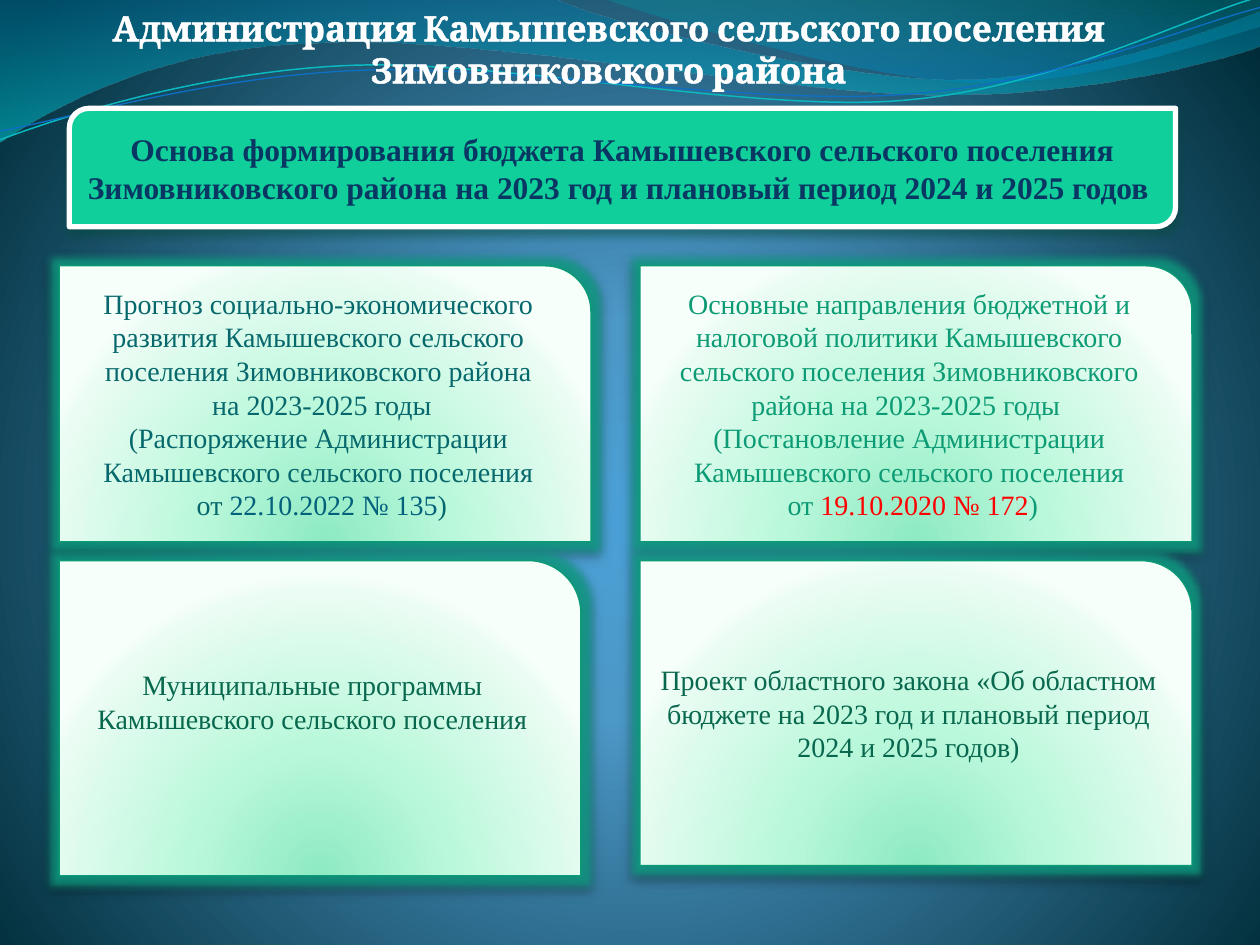
"""Build the slide on what the budget of a rural settlement is based on."""
from dataclasses import dataclass

from lxml import etree
from pptx import Presentation
from pptx import util as u
from pptx.dml.color import RGBColor
from pptx.enum import shapes, text
from pptx.oxml.ns import qn

COLORS = {
    "white": "FFFFFF", "banner": "10CF9B", "navy": "083763", "edge": "0A9B74",
    "teal": "06686C", "blue": "04617B", "green": "0C9B74", "red": "FF0000",
    "forest": "08684E", "glow": "0F9F84", "cyan": "0AB8BF", "azure": "0F6FC6",
}
SERIF = "Times New Roman"
CARD_STOPS = [(0, "8DEAC2"), (43, "BAF8DB"), (93, "EAFCF3"), (100, "F7FFFB")]
BACK_STOPS = [(0, "4AA0D6"), (25, "4C98C7"), (100, "002C38")]
UNITS_PER_INCH = 1000


@dataclass
class Card:
    left: float
    top: float
    width: float
    height: float
    color: str
    lines: list[str]
    accent: str = ""
    accent_color: str = ""
    bottom_inset: float = 0.05


@dataclass
class Wave:
    start: tuple[float, float]
    segments: list[tuple[float, ...]]
    stops: list[tuple] | None = None
    line: str = ""
    weight: float = 0


WAVES = [
    Wave((0, 0), [(4.4, -0.01), (4.76, 0.17, 6.64, 0.63, 7.58, 0.63),
                  (8.53, 0.63, 9.58, 0.26, 10, 0.09), (10.01, 0.36),
                  (9.83, 0.44, 8.7, 0.76, 7.46, 0.75), (6.22, 0.75, 3.82, 0.28, 2.57, 0.34),
                  (1.29, 0.36, 0.46, 0.83, -0.01, 1.13)],
         stops=[(0, "0074A1", 45), (100, "00C6CF", 55)]),
    Wave((4.79, -0.01), [(5.09, 0.11, 6.82, 0.62, 7.69, 0.65),
                         (8.56, 0.69, 9.61, 0.32, 10, 0.21), (10, 0)],
         stops=[(0, "00A1A9", 30), (80, "008BBF", 45)]),
    Wave((0, 1.11), [(0.48, 0.93, 1.58, 0.57, 2.77, 0.52), (3.95, 0.47, 5.93, 0.89, 7.13, 0.8),
                     (8.33, 0.71, 9.38, 0.15, 9.98, -0.02)], line="cyan", weight=0.85),
    Wave((0, 1.04), [(0.47, 0.96, 1.64, 0.61, 2.83, 0.56), (4.03, 0.51, 5.97, 0.84, 7.17, 0.75),
                     (8.36, 0.67, 9.41, 0.21, 10, 0.06)], line="azure", weight=0.75),
]
CARDS = [
    Card(0.47, 2.11, 4.22, 2.19, "teal", [
        "Прогноз социально-экономического развития Камышевского сельского поселения "
        "Зимовниковского района",
        " на 2023-2025 годы",
        "(Распоряжение Администрации Камышевского сельского поселения",
        " от 22.10.2022 № 135)"], "22.10.2022 № 135", "blue"),
    Card(5.08, 2.11, 4.38, 2.19, "green", [
        "Основные направления бюджетной и налоговой политики Камышевского сельского "
        "поселения Зимовниковского района на 2023-2025 годы ",
        "(Постановление Администрации Камышевского сельского поселения",
        " от 19.10.2020 № 172)"], "19.10.2020 № 172", "red"),
    Card(0.47, 4.45, 4.14, 2.5, "forest", [
        "Муниципальные программы", "Камышевского сельского поселения"], bottom_inset=0.32),
    Card(5.08, 4.45, 4.38, 2.42, "forest", [
        "Проект областного закона «Об областном бюджете на 2023 год и плановый период "
        "2024 и 2025 годов)"]),
]


def rgb(name: str) -> RGBColor:
    return RGBColor.from_string(COLORS[name])


def add_color(parent, value: str, alpha: int = 100) -> None:
    clr = etree.SubElement(parent, qn("a:srgbClr"), val=value)
    if alpha < 100:
        etree.SubElement(clr, qn("a:alpha"), val=str(alpha * 1000))


def set_gradient(props, stops, focus=None) -> None:
    """Replace the empty fill with a circular gradient, or a vertical one."""
    grad = etree.Element(qn("a:gradFill"), rotWithShape="1")
    stop_list = etree.SubElement(grad, qn("a:gsLst"))
    for pos, *color in stops:
        add_color(etree.SubElement(stop_list, qn("a:gs"), pos=str(pos * 1000)), *color)
    if focus:
        circle = etree.SubElement(grad, qn("a:path"))
        circle.set("path", "circle")
        sides = {side: str(v * 1000) for side, v in zip("ltrb", focus)}
        etree.SubElement(circle, qn("a:fillToRect"), **sides)
    else:
        etree.SubElement(grad, qn("a:lin"), ang="5400000", scaled="1")
    props.replace(props.find(qn("a:noFill")), grad)


def set_effects(sp, shadow: str, alpha: int, blur: float, glow: bool = False) -> None:
    sp.shadow.inherit = False
    effects = sp._element.spPr.find(qn("a:effectLst"))
    if glow:
        add_color(etree.SubElement(effects, qn("a:glow"), rad=str(u.Pt(9))), COLORS["glow"], 80)
    outer = etree.SubElement(effects, qn("a:outerShdw"), blurRad=str(u.Pt(blur)),
                             dist=str(u.Pt(3)), dir="5400000", rotWithShape="0")
    add_color(outer, shadow, alpha)


def curve_segments(sp, segments) -> None:
    """Merge each run of three straight segments that stands for a curve."""
    edges = iter(list(sp._element.iter(qn("a:lnTo"))))
    for segment in segments:
        edge = next(edges)
        if len(segment) == 6:
            curve = etree.Element(qn("a:cubicBezTo"))
            edge.addprevious(curve)
            for part in (edge, next(edges), next(edges)):
                curve.append(part[0])
                part.getparent().remove(part)


def draw_wave(s, wave: Wave) -> None:
    def scaled(x, y):
        return round(x * UNITS_PER_INCH), round(y * UNITS_PER_INCH)

    points = [scaled(*seg[i:i + 2]) for seg in wave.segments for i in range(0, len(seg), 2)]
    builder = s.shapes.build_freeform(*scaled(*wave.start), scale=u.Inches(1) / UNITS_PER_INCH)
    builder.add_line_segments(points, close=bool(wave.stops))
    sp = builder.convert_to_shape()
    curve_segments(sp, wave.segments)
    sp.shadow.inherit = False
    sp.fill.background()
    if wave.stops:
        sp.line.fill.background()
        set_gradient(sp._element.spPr, wave.stops)
    else:
        sp.line.color.rgb = rgb(wave.line)
        sp.line.width = u.Pt(wave.weight)


def style(p, size: float, color: str, font: str = SERIF, bold: bool = False) -> None:
    p.alignment = text.PP_ALIGN.CENTER
    p.font.size, p.font.name, p.font.bold = u.Pt(size), font, bold
    p.font.color.rgb = rgb(color)


def add_box(s, kind, box: tuple[float, ...], line: str, weight: float):
    sp = s.shapes.add_shape(kind, *map(u.Inches, box))
    sp.line.color.rgb = rgb(line)
    sp.line.width = u.Pt(weight)
    sp.text_frame.vertical_anchor = text.MSO_ANCHOR.MIDDLE
    return sp


def draw_banner(s) -> None:
    sp = add_box(s, shapes.MSO_SHAPE.ROUND_2_DIAG_RECTANGLE, (0.55, 0.86, 8.78, 0.94), "white", 3)
    sp.fill.solid()
    sp.fill.fore_color.rgb = rgb("banner")
    set_effects(sp, "044A37", 48, 4.5)
    p = sp.text_frame.paragraphs[0]
    p.text = ("Основа формирования бюджета Камышевского сельского поселения "
              "Зимовниковского района на 2023 год и плановый период 2024 и 2025 годов ")
    style(p, 18, "navy", bold=True)


def draw_card(s, card: Card) -> None:
    box = (card.left, card.top, card.width, card.height)
    sp = add_box(s, shapes.MSO_SHAPE.ROUND_1_RECTANGLE, box, "edge", 0.75)
    sp.fill.background()
    set_gradient(sp._element.spPr, CARD_STOPS, (50, 130, 50, -30))
    set_effects(sp, "000000", 40, 5.2, glow=True)
    tf = sp.text_frame
    tf.margin_bottom = u.Inches(card.bottom_inset)
    for i, line in enumerate(card.lines):
        p = tf.add_paragraph() if i else tf.paragraphs[0]
        style(p, 16, card.color)
        parts = line.partition(card.accent) if card.accent else (line,)
        for part in filter(None, parts):
            r = p.add_run()
            r.text = part
            if part == card.accent:
                r.font.color.rgb = rgb(card.accent_color)


def place_title(s) -> None:
    title = s.shapes.title
    title.left, title.top, title.width, title.height = map(u.Inches, (0.75, 0, 8.16, 0.77))
    tf = title.text_frame
    tf.auto_size = text.MSO_AUTO_SIZE.NONE
    tf.vertical_anchor = text.MSO_ANCHOR.TOP
    tf.text = "Администрация Камышевского сельского поселения Зимовниковского района"
    p = tf.paragraphs[0]
    style(p, 20, "white", "Cambria", bold=True)
    outline = etree.Element(qn("a:ln"), w=str(u.Pt(1.45)))
    add_color(etree.SubElement(outline, qn("a:solidFill")), COLORS["white"])
    p.runs[0]._r.get_or_add_rPr().insert(0, outline)
    s.shapes._spTree.append(title._element)


def main() -> None:
    prs = Presentation()
    prs.slide_width, prs.slide_height = u.Inches(10), u.Inches(7.5)
    s = prs.slides.add_slide(prs.slide_layouts[5])
    s.background.fill.background()
    set_gradient(s._element.find(".//" + qn("p:bgPr")), BACK_STOPS, (10, 110, 10, 100))
    for wave in WAVES:
        draw_wave(s, wave)
    draw_banner(s)
    for card in CARDS:
        draw_card(s, card)
    place_title(s)
    prs.save("out.pptx")


if __name__ == "__main__":
    main()
